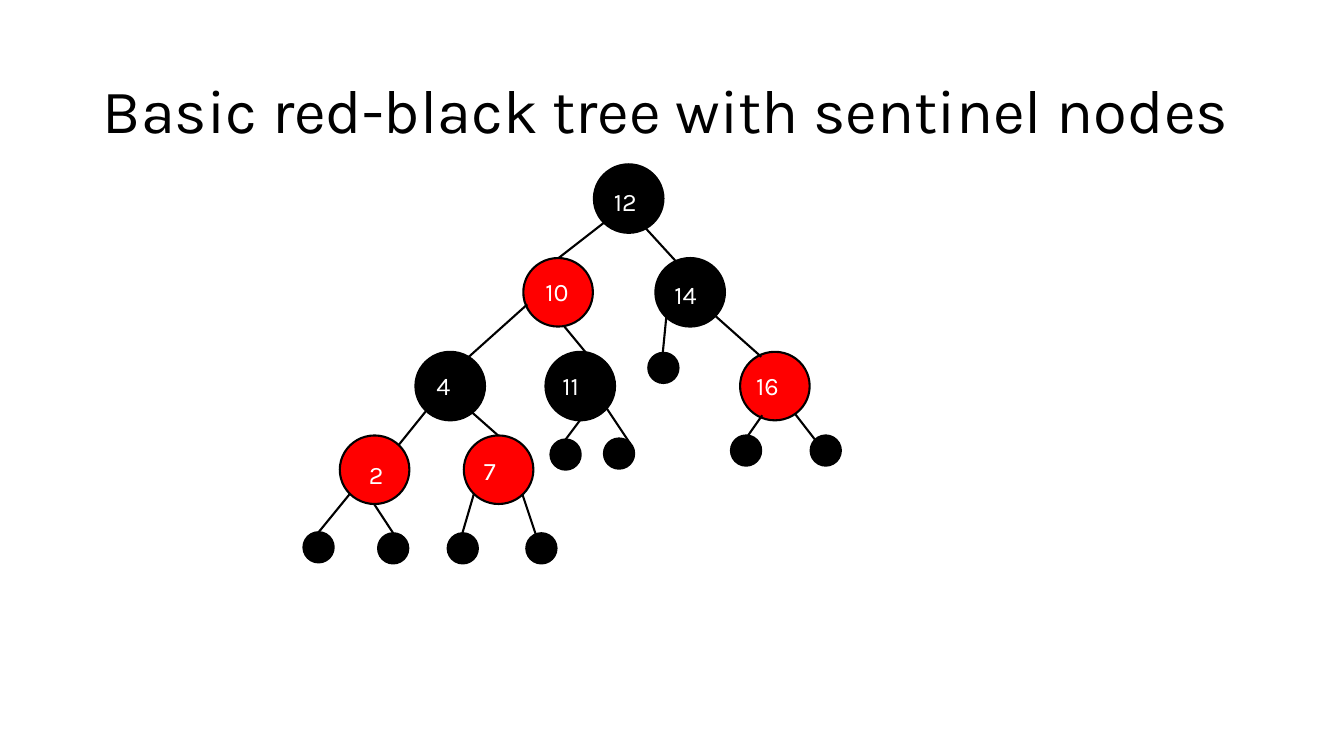
import pptx
import pptx.util
import pptx.dml.color
import pptx.enum.shapes
import pptx.enum.text
import pptx.oxml.ns
import lxml.etree

Inches = pptx.util.Inches
BLACK, RED, WHITE = "000000", "FF0000", "FFFFFF"


def paint(color_format, color):
    color_format.rgb = pptx.dml.color.RGBColor.from_string(color)


def write(shape, text, size, color, line_spacing):
    paragraph = shape.text_frame.paragraphs[0]
    paragraph.text = text
    paragraph.alignment = pptx.enum.text.PP_ALIGN.LEFT
    paragraph.line_spacing = line_spacing
    font_format = {"name": "Karla", "size": pptx.util.Pt(size)}
    for attribute, value in font_format.items():
        setattr(paragraph.font, attribute, value)
    paint(paragraph.font.color, color)


presentation = pptx.Presentation()
presentation.slide_width = Inches(13.33)
presentation.slide_height = Inches(7.5)
slide = presentation.slides.add_slide(presentation.slide_layouts[5])

title = slide.shapes.title
title_format = {"left": 0.92, "top": 0.4, "width": 11.5, "height": 1.45}
for attribute, value in title_format.items():
    setattr(title, attribute, Inches(value))
title.text_frame.auto_size = pptx.enum.text.MSO_AUTO_SIZE.NONE
title.text_frame.vertical_anchor = pptx.enum.text.MSO_ANCHOR.MIDDLE
write(title, "Basic red-black tree with sentinel nodes", 44, BLACK, 0.9)

level_tops = [1.63, 2.56, 3.49, 4.32]
key_nodes = [
    ("12", 0, 5.89, BLACK, 5.99, 1.8),
    ("10", 1, 5.19, RED, 5.31, 2.69),
    ("14", 1, 6.5, BLACK, 6.59, 2.72),
    ("4", 2, 4.12, BLACK, 4.23, 3.62),
    ("11", 2, 5.41, BLACK, 5.48, 3.62),
    ("16", 2, 7.34, RED, 7.4, 3.62),
    ("2", 3, 3.37, RED, 3.56, 4.51),
    ("7", 3, 4.6, RED, 4.7, 4.47),
]
sentinels = [
    (3.01, 5.28), (3.75, 5.29), (4.44, 5.29), (5.22, 5.29), (5.46, 4.36),
    (5.99, 4.35), (6.43, 3.5), (8.04, 4.32), (7.25, 4.32),
]
edges = [
    (5.99, 2.21, 5.54, 2.56), (6.4, 2.26, 6.72, 2.61),
    (5.23, 3.02, 4.65, 3.54), (5.59, 3.23, 5.92, 3.63),
    (6.61, 3.13, 6.57, 3.54), (7.09, 3.13, 7.55, 3.54),
    (4.24, 4.06, 3.95, 4.42), (4.68, 4.09, 4.94, 4.32),
    (5.76, 4.16, 5.61, 4.36), (6.01, 4.04, 6.25, 4.4),
    (7.56, 4.12, 7.42, 4.32), (7.88, 4.1, 8.09, 4.37),
    (3.47, 4.9, 3.16, 5.28), (3.71, 5, 3.9, 5.29),
    (4.7, 4.9, 4.58, 5.31), (5.18, 4.9, 5.32, 5.32),
]

circles = [(left, level_tops[level], 0.69, 0.68, color)
           for key, level, left, color, label_left, label_top in key_nodes]
circles += [(left, top, 0.3, 0.3, BLACK) for left, top in sentinels]
for *box, color in circles:
    circle = slide.shapes.add_shape(
        pptx.enum.shapes.MSO_SHAPE.OVAL, *map(Inches, box))
    circle.shadow.inherit = False
    circle.fill.solid()
    paint(circle.fill.fore_color, color)
    paint(circle.line.color, BLACK)
    circle.line.width = pptx.util.Pt(1.5)

for ends in edges:
    edge = slide.shapes.add_connector(
        pptx.enum.shapes.MSO_CONNECTOR.STRAIGHT, *map(Inches, ends))
    paint(edge.line.color, BLACK)
    edge.line.width = pptx.util.Pt(1.5)
    lxml.etree.SubElement(
        edge.element.spPr, pptx.oxml.ns.qn("a:effectLst"))

for key, level, left, color, label_left, label_top in key_nodes:
    label = slide.shapes.add_textbox(
        *map(Inches, (label_left, label_top, 0.62, 0.4)))
    label.text_frame.word_wrap = True
    label.text_frame.auto_size = pptx.enum.text.MSO_AUTO_SIZE.SHAPE_TO_FIT_TEXT
    write(label, key, 18, WHITE, 1.0)

presentation.save("out.pptx")
